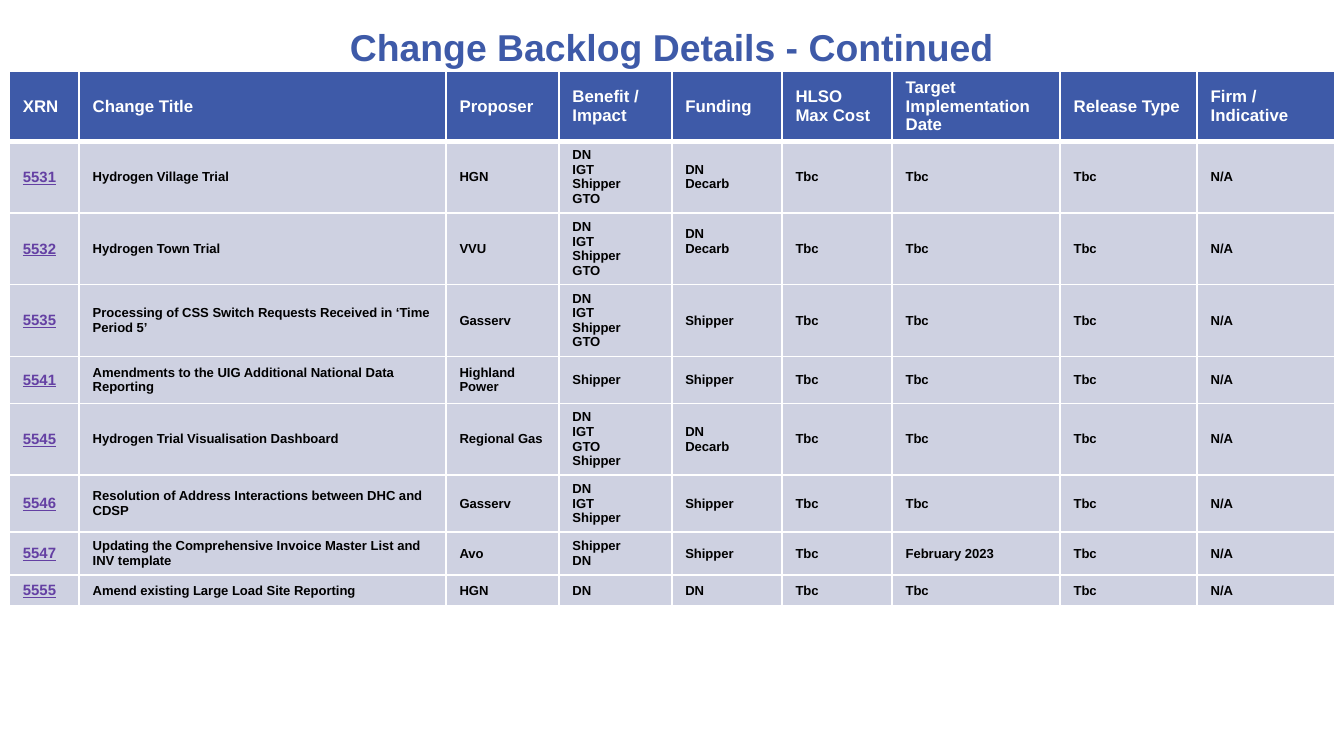
from lxml import etree
from pptx import Presentation
from pptx.dml.color import RGBColor
from pptx.enum.text import MSO_ANCHOR, PP_ALIGN
from pptx.oxml.ns import qn
from pptx.util import Inches, Pt

MIDDLE = MSO_ANCHOR.MIDDLE
CENTER = PP_ALIGN.CENTER

FONT = "Arial"
COLORS = {
    "blue": "3E5AA8",
    "row": "CED1E1",
    "link": "6440A3",
    "text": "000000",
    "white": "FFFFFF",
}

SLIDE_WIDTH = 10
SLIDE_HEIGHT = SLIDE_WIDTH * 9 / 16
COLUMN_WIDTHS = [0.52, 2.73, 0.84, 0.84, 0.82, 0.82, 1.25, 1.02, 1.02]
ROW_HEIGHTS = [0.52, 0.53, 0.53, 0.53, 0.35, 0.53, 0.42, 0.32, 0.23]
HEADERS = ["XRN", "Change Title", "Proposer", "Benefit / Impact", "Funding",
           "HLSO\nMax Cost", "Target Implementation Date", "Release Type",
           "Firm / Indicative"]

# Number, title, proposer, benefit / impact, funding, target date
CHANGES = [
    ("5531", "Hydrogen Village Trial", "HGN",
     "DN\nIGT\nShipper\nGTO", "DN\nDecarb", "Tbc"),
    ("5532", "Hydrogen Town Trial", "VVU",
     "DN\nIGT\nShipper\nGTO", "DN\nDecarb", "Tbc"),
    ("5535", "Processing of CSS Switch Requests Received in ‘Time Period 5’",
     "Gasserv", "DN\nIGT\nShipper\nGTO", "Shipper", "Tbc"),
    ("5541", "Amendments to the UIG Additional National Data Reporting",
     "Highland Power", "Shipper", "Shipper", "Tbc"),
    ("5545", "Hydrogen Trial Visualisation Dashboard", "Regional Gas",
     "DN\nIGT\nGTO\nShipper", "DN\nDecarb", "Tbc"),
    ("5546", "Resolution of Address Interactions between DHC and CDSP",
     "Gasserv", "DN\nIGT\nShipper", "Shipper", "Tbc"),
    ("5547", "Updating the Comprehensive Invoice Master List and INV template",
     "Avo", "Shipper\nDN", "Shipper", "February 2023"),
    ("5555", "Amend existing Large Load Site Reporting", "HGN",
     "DN", "DN", "Tbc"),
]


def color(name):
    return RGBColor.from_string(COLORS[name])


def write_text(text_frame, text, size, color_name, underline=False, align=None):
    text_frame.text = text
    for paragraph in text_frame.paragraphs:
        paragraph.alignment = align
        font = paragraph.font
        font.name = FONT
        font.size = Pt(size)
        font.bold = True
        font.underline = underline
        font.color.rgb = color(color_name)


def set_borders(cell, top, bottom):
    properties = cell._tc.get_or_add_tcPr()
    for side, width in (("L", 1), ("R", 1), ("T", top), ("B", bottom)):
        line = etree.SubElement(properties, qn(f"a:ln{side}"), w=str(Pt(width)))
        fill = etree.SubElement(line, qn("a:solidFill"))
        etree.SubElement(fill, qn("a:srgbClr"), val=COLORS["white"])


def add_title(slide, left, top, width, height):
    shape = slide.shapes.add_textbox(
        Inches(left), Inches(top), Inches(width), Inches(height))
    text_frame = shape.text_frame
    text_frame.word_wrap = True
    text_frame.vertical_anchor = MIDDLE
    write_text(text_frame, "Change Backlog Details - Continued", 20, "blue",
               align=CENTER)


def add_backlog_table(slide, left, top):
    rows = [HEADERS]
    for *details, target_date in CHANGES:
        rows.append([*details, "Tbc", target_date, "Tbc", "N/A"])
    table = slide.shapes.add_table(
        len(rows), len(HEADERS), Inches(left), Inches(top),
        Inches(sum(COLUMN_WIDTHS)), Inches(sum(ROW_HEIGHTS))).table
    table.horz_banding = False
    for column, width in zip(table.columns, COLUMN_WIDTHS):
        column.width = Inches(width)

    for row_index, texts in enumerate(rows):
        table.rows[row_index].height = Inches(ROW_HEIGHTS[row_index])
        is_header = row_index == 0
        for column_index, text in enumerate(texts):
            cell = table.cell(row_index, column_index)
            cell.vertical_anchor = MIDDLE
            # A thick rule separates the header from the first change
            set_borders(cell, top=3 if row_index == 1 else 1,
                        bottom=3 if is_header else 1)
            cell.fill.solid()
            cell.fill.fore_color.rgb = color("blue" if is_header else "row")
            if is_header:
                write_text(cell.text_frame, text, 9, "white")
            elif column_index == 0:
                write_text(cell.text_frame, text, 8, "link", underline=True)
            else:
                write_text(cell.text_frame, text, 7, "text")

    # The funding of change 5532 sits one half line higher
    table.cell(2, 4).margin_bottom = Inches(0.16)


def main():
    presentation = Presentation()
    presentation.slide_width = Inches(SLIDE_WIDTH)
    presentation.slide_height = Inches(SLIDE_HEIGHT)
    slide = presentation.slides.add_slide(presentation.slide_layouts[6])
    add_backlog_table(slide, 0.07, 0.53)
    add_title(slide, 0.5, 0.14, 9, 0.41)
    presentation.save("out.pptx")


if __name__ == "__main__":
    main()
